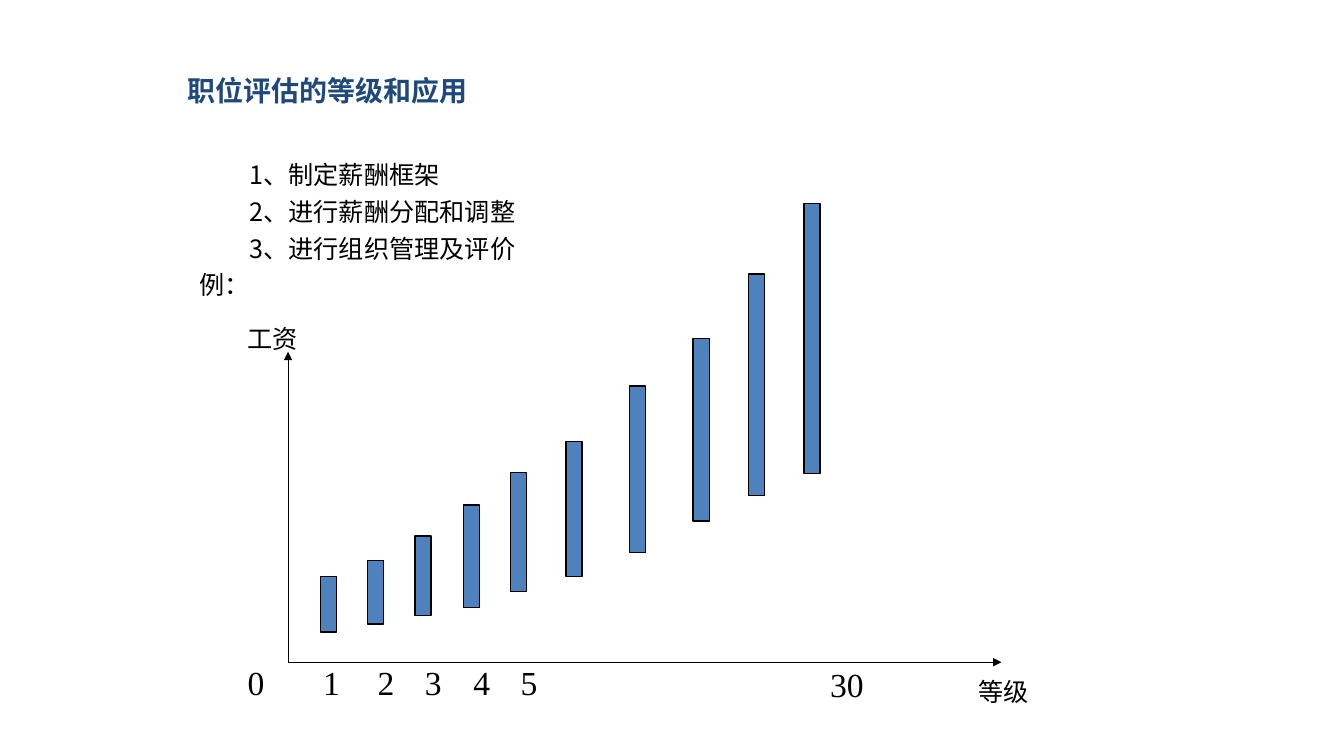
import pptx
import pptx.util
import pptx.dml.color
import pptx.enum.shapes
import pptx.enum.text
import pptx.oxml.ns
import lxml.etree

Pt = pptx.util.Pt
qn = pptx.oxml.ns.qn

COLORS = {"title": "1F497D", "text": "000000", "bar": "4F81BD", "line": "000000"}
CJK = "Noto Sans CJK SC"
SERIF = "Times New Roman"

TITLE = "职位评估的等级和应用"
USES = [
    ("1、制定薪酬框架", 56),
    ("2、进行薪酬分配和调整", 56),
    ("3、进行组织管理及评价", 56),
    ("例：", 20),
]
ORIGIN = (205.9, 473)
AXIS_ENDS = [(205.9, 251.3), (715.7, 473)]
AXIS_NAMES = [("工资", 169.9, 227.5), ("等级", 691.9, 479.5)]
GRADES = [
    ("0", 169.9, 469), ("1", 223.9, 469), ("2", 262.8, 469), ("3", 296.6, 469),
    ("4", 331.2, 469), ("5", 365, 469), ("30", 586.1, 470.5),
]
BAR_WIDTH = 11.5
PAY_RANGES = [
    (229, 411.8, 451.4), (262.8, 400.3, 445.7), (296.6, 383, 439.9),
    (331.2, 360.7, 434.1), (365, 337.7, 422.7), (404.6, 315.4, 411.9),
    (450, 275.8, 394.6), (495.4, 241.9, 372.2), (535, 195.8, 354.2),
    (574.6, 145.4, 338.4),
]


def rgb(name):
    return pptx.dml.color.RGBColor.from_string(COLORS[name])


def add_run(p, text, size, font, color="text", bold=False):
    r = p.add_run()
    r.text = text
    r.font.size = Pt(size)
    r.font.name = font
    r.font.bold = bold
    r.font.color.rgb = rgb(color)
    ea = lxml.etree.SubElement(r._r.get_or_add_rPr(), qn("a:ea"))
    ea.set("typeface", CJK)


def add_box(s, x, y, w, h):
    tf = s.shapes.add_textbox(Pt(x), Pt(y), Pt(w), Pt(h)).text_frame
    tf.word_wrap = True
    return tf


def add_title(s):
    sp = s.shapes.title
    sp.left, sp.top, sp.width, sp.height = Pt(126.7), Pt(49), Pt(285), Pt(39)
    tf = sp.text_frame
    tf.vertical_anchor = pptx.enum.text.MSO_ANCHOR.TOP
    p = tf.paragraphs[0]
    p.alignment = pptx.enum.text.PP_ALIGN.LEFT
    add_run(p, TITLE, 20, CJK, "title", True)


def add_uses(s):
    tf = add_box(s, 115.2, 110.6, 561.6, 130)
    for i, (text, indent) in enumerate(USES):
        p = tf.add_paragraph() if i else tf.paragraphs[0]
        p.space_after = Pt(4.5)
        p._p.get_or_add_pPr().set("marL", str(Pt(indent)))
        add_run(p, text, 18, CJK)


def add_axis(s, end):
    points = [Pt(v) for v in ORIGIN + end]
    c = s.shapes.add_connector(pptx.enum.shapes.MSO_CONNECTOR.STRAIGHT, *points)
    c.line.color.rgb = rgb("line")
    c.line.width = Pt(0.75)
    tail = lxml.etree.SubElement(c.line._get_or_add_ln(), qn("a:tailEnd"))
    tail.set("type", "triangle")
    lxml.etree.SubElement(c._element.spPr, qn("a:effectLst"))


def add_bar(s, x, top, bottom):
    sp = s.shapes.add_shape(pptx.enum.shapes.MSO_SHAPE.RECTANGLE,
                            Pt(x), Pt(top), Pt(BAR_WIDTH), Pt(bottom - top))
    sp.shadow.inherit = False
    sp.fill.solid()
    sp.fill.fore_color.rgb = rgb("bar")
    sp.line.color.rgb = rgb("line")
    sp.line.width = Pt(1)


def main():
    prs = pptx.Presentation()
    prs.slide_width, prs.slide_height = Pt(960.5), Pt(540)
    s = prs.slides.add_slide(prs.slide_layouts[5])
    add_title(s)
    add_uses(s)
    for end in AXIS_ENDS:
        add_axis(s, end)
    for text, x, y in GRADES:
        add_run(add_box(s, x, y, 41.8, 36).paragraphs[0], text, 24, SERIF)
    for text, x, y in AXIS_NAMES:
        add_run(add_box(s, x, y, 72, 29).paragraphs[0], text, 18, CJK)
    for x, top, bottom in PAY_RANGES:
        add_bar(s, x, top, bottom)
    prs.save("out.pptx")


if __name__ == "__main__":
    main()
